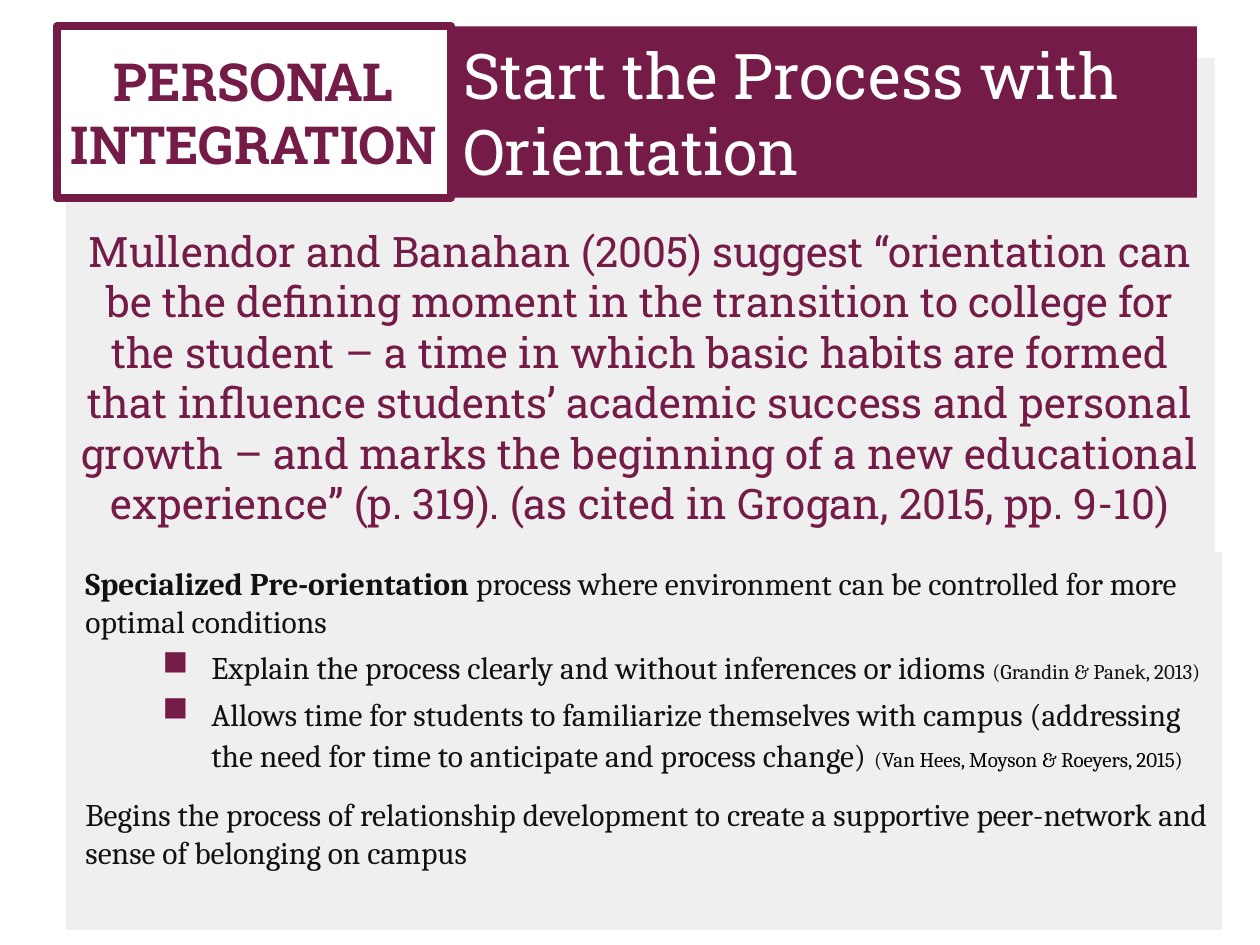
from dataclasses import dataclass

from lxml import etree
from pptx import Presentation
from pptx.dml.color import RGBColor
from pptx.enum.shapes import MSO_SHAPE
from pptx.enum.text import MSO_ANCHOR, MSO_AUTO_SIZE, PP_ALIGN
from pptx.oxml.ns import qn
from pptx.util import Inches, Pt

RECTANGLE = MSO_SHAPE.RECTANGLE
TOP, MIDDLE = MSO_ANCHOR.TOP, MSO_ANCHOR.MIDDLE
LEFT, CENTER = PP_ALIGN.LEFT, PP_ALIGN.CENTER
NO_AUTOFIT = MSO_AUTO_SIZE.NONE
TITLE_ONLY = 5


@dataclass(frozen=True)
class Theme:
    maroon: RGBColor = RGBColor(0x74, 0x1B, 0x47)
    panel: RGBColor = RGBColor(0xEF, 0xEF, 0xEF)
    white: RGBColor = RGBColor(0xFF, 0xFF, 0xFF)
    ink: RGBColor = RGBColor(0x11, 0x11, 0x11)
    black: RGBColor = RGBColor(0, 0, 0)
    heading_font: str = "Roboto Slab"
    body_font: str = "Cambria"
    banner: int = 36
    title: int = 30
    quote: int = 24
    body: int = 18
    citation: int = 12


THEME = Theme()

QUOTE = (
    "Mullendor and Banahan (2005) suggest “orientation can be the defining moment "
    "in the transition to college for the student – a time in which basic habits are "
    "formed that influence students’ academic success and personal growth – and marks "
    "the beginning of a new educational experience” (p. 319). "
    "(as cited in Grogan, 2015, pp. 9-10)"
)


def add_rectangle(slide, left, top, width, height, fill):
    shape = slide.shapes.add_shape(
        RECTANGLE, Inches(left), Inches(top), Inches(width), Inches(height))
    shape.shadow.inherit = False
    shape.fill.solid()
    shape.fill.fore_color.rgb = fill
    shape.line.fill.background()
    return shape


def prepare_frame(shape, anchor):
    frame = shape.text_frame
    frame.word_wrap = True
    frame.auto_size = NO_AUTOFIT
    frame.vertical_anchor = anchor
    frame.margin_left = frame.margin_right = Inches(0.1)
    frame.margin_top = frame.margin_bottom = Inches(0.1)
    return frame


def write_heading(shape, text, size, color, anchor=MIDDLE, alignment=CENTER, bold=False):
    paragraph = prepare_frame(shape, anchor).paragraphs[0]
    paragraph.text = text
    paragraph.alignment = alignment
    font = paragraph.font
    font.name, font.size, font.bold = THEME.heading_font, Pt(size), bold
    font.color.rgb = color


def add_run(paragraph, text, size=None, bold=None, color=None):
    run = paragraph.add_run()
    run.text = text
    if size:
        run.font.size = Pt(size)
    if bold:
        run.font.bold = True
    if color is not None:
        run.font.color.rgb = color


def style_body(paragraph, space_before=4.8):
    paragraph.alignment = LEFT
    paragraph.space_before = Pt(space_before)
    font = paragraph.font
    font.name, font.size = THEME.body_font, Pt(THEME.body)
    font.color.rgb = THEME.ink


def add_square_bullet(paragraph):
    paragraph.level = 1
    properties = paragraph._p.get_or_add_pPr()
    properties.set("marL", str(Inches(1)))
    properties.set("indent", str(Inches(-0.39)))
    color = etree.SubElement(properties, qn("a:buClr"))
    etree.SubElement(color, qn("a:srgbClr"), val=str(THEME.maroon))
    etree.SubElement(properties, qn("a:buSzPct"), val="111000")
    etree.SubElement(properties, qn("a:buChar"), char="■")


def write_details(shape):
    frame = prepare_frame(shape, TOP)

    introduction = frame.paragraphs[0]
    style_body(introduction)
    add_run(introduction, "Specialized Pre-orientation", bold=True)
    add_run(introduction,
            " process where environment can be controlled for more optimal conditions")

    explain = frame.add_paragraph()
    style_body(explain)
    add_square_bullet(explain)
    add_run(explain, "Explain the process clearly and without inferences or idioms ")
    add_run(explain, "(Grandin & Panek, 2013)", THEME.citation)

    familiarize = frame.add_paragraph()
    style_body(familiarize)
    add_square_bullet(familiarize)
    add_run(familiarize,
            "Allows time for students to familiarize themselves with campus "
            "(addressing the need for time to anticipate and process change)")
    add_run(familiarize, " ", 20)
    add_run(familiarize, "(", THEME.citation)
    add_run(familiarize, "Van Hees, Moyson & Roeyers, 2015)", THEME.citation,
            color=THEME.black)

    relationships = frame.add_paragraph()
    style_body(relationships, space_before=12)
    add_run(relationships,
            "Begins the process of relationship development to create a supportive "
            "peer-network and sense of belonging on campus")


def place_title(slide):
    title = slide.shapes.title
    title.left, title.top = Inches(0.45), Inches(0.21)
    title.width, title.height = Inches(3.13), Inches(1.36)
    title.fill.solid()
    title.fill.fore_color.rgb = THEME.white
    title.line.color.rgb = THEME.maroon
    title.line.width = Pt(4.5)
    write_heading(title, "PERSONAL INTEGRATION", THEME.title, THEME.maroon, bold=True)
    return title


def main():
    presentation = Presentation()
    presentation.slide_width, presentation.slide_height = Inches(10), Inches(7.5)
    slide = presentation.slides.add_slide(presentation.slide_layouts[TITLE_ONLY])

    # Title box, in front of the grey panel
    title = place_title(slide)
    panel = add_rectangle(slide, 0.52, 0.46, 9.12, 6.92, THEME.panel)
    title.element.addprevious(panel.element)

    # Banner beside the title
    banner = add_rectangle(slide, 3.58, 0.21, 5.92, 1.36, THEME.maroon)
    write_heading(banner, "Start the Process with Orientation", THEME.banner,
                  THEME.white, alignment=LEFT)

    # Details on pre-orientation
    write_details(add_rectangle(slide, 0.58, 4.38, 9.12, 3, THEME.panel))

    # Quotation
    quote = slide.shapes.add_textbox(
        Inches(0.52), Inches(1.69), Inches(9.12), Inches(2.81))
    write_heading(quote, QUOTE, THEME.quote, THEME.maroon, anchor=TOP)

    presentation.save("out.pptx")


if __name__ == "__main__":
    main()
